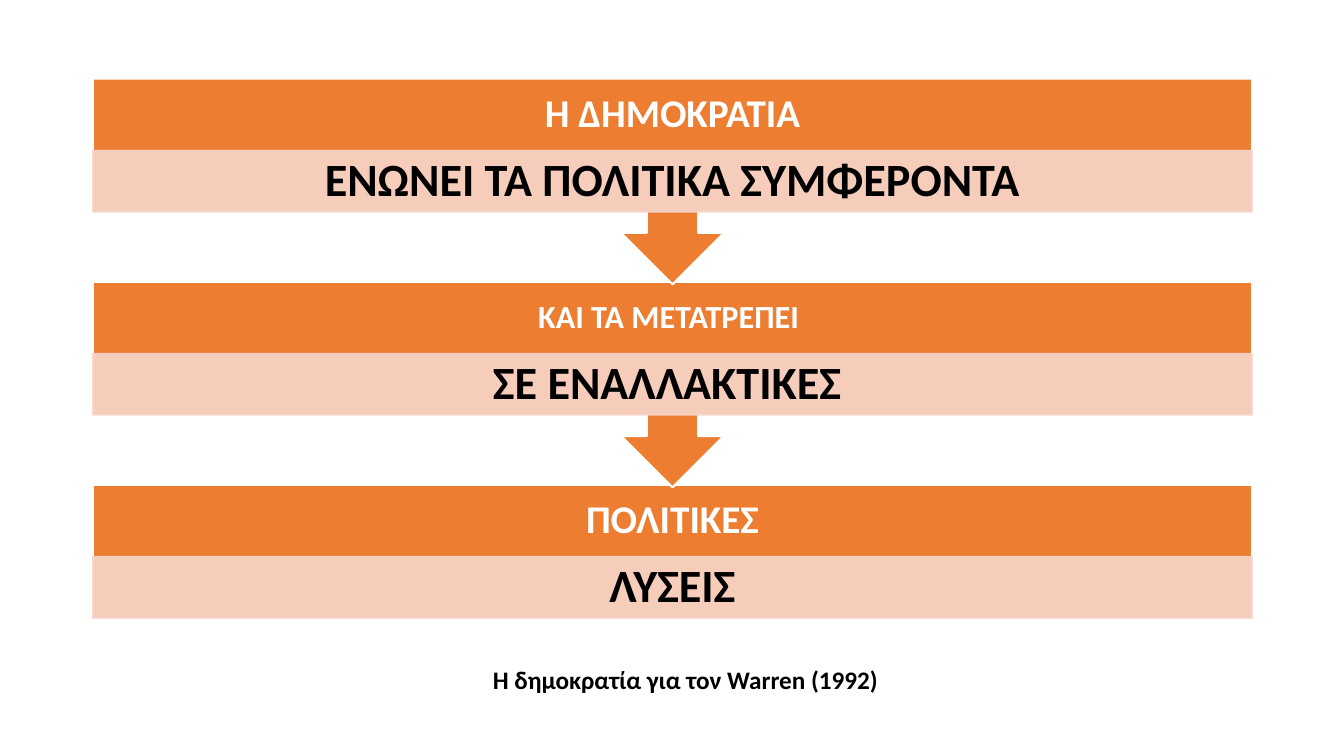
from dataclasses import dataclass

import pptx
import pptx.util
from lxml import etree
from pptx.dml.color import RGBColor
from pptx.enum.shapes import MSO_SHAPE
from pptx.enum.text import MSO_ANCHOR, MSO_AUTO_SIZE, PP_ALIGN
from pptx.oxml.ns import qn


@dataclass(frozen=True)
class Theme:
    font: str = "Calibri"
    band: str = "ED7D31"
    detail: str = "F7D5CB"
    light: str = "FFFFFF"
    dark: str = "000000"
    heading_size: int = 28
    small_heading_size: int = 23
    detail_size: int = 33
    caption_size: int = 18


@dataclass(frozen=True)
class Box:
    """A rectangle in percent of the slide's width and height."""
    left: float
    top: float
    width: float
    height: float


@dataclass(frozen=True)
class Stage:
    heading: str
    detail: str
    heading_size: int
    heading_inset: float


THEME = Theme()
SLIDE_WIDTH = pptx.util.Inches(13.33)
SLIDE_HEIGHT = pptx.util.Inches(7.5)

STAGE_LEFT, STAGE_WIDTH = 6.9, 86.27
FIRST_TOP, LAST_TOP = 10.4, 64.13
CALLOUT_HEIGHT, BLOCK_HEIGHT = 27.2, 17.6
HEADING_HEIGHT, DETAIL_HEIGHT = 9.5, 8.13
CAPTION_BOX = Box(33.08, 87.2, 35.86, 5.33)

STAGES = [
    Stage("Η ΔΗΜΟΚΡΑΤΙΑ", "ΕΝΩΝΕΙ ΤΑ ΠΟΛΙΤΙΚΑ ΣΥΜΦΕΡΟΝΤΑ", THEME.heading_size, 16),
    Stage("ΚΑΙ ΤΑ ΜΕΤΑΤΡΕΠΕΙ ", "ΣΕ ΕΝΑΛΛΑΚΤΙΚΕΣ ", THEME.small_heading_size, 13),
    Stage("ΠΟΛΙΤΙΚΕΣ", "ΛΥΣΕΙΣ", THEME.heading_size, 16),
]


def place(box: Box) -> tuple[int, int, int, int]:
    return (round(SLIDE_WIDTH * box.left / 100), round(SLIDE_HEIGHT * box.top / 100),
            round(SLIDE_WIDTH * box.width / 100), round(SLIDE_HEIGHT * box.height / 100))


def write_text(shape, text: str, *, size: int, color: str, inset_x: float = 7.2,
               inset_y: float = 3.6, anchor=MSO_ANCHOR.MIDDLE, spacing: float = 0.9) -> None:
    frame = shape.text_frame
    frame.word_wrap = True
    frame.vertical_anchor = anchor
    frame.margin_left = frame.margin_right = pptx.util.Pt(inset_x)
    frame.margin_top = frame.margin_bottom = pptx.util.Pt(inset_y)
    paragraph = frame.paragraphs[0]
    paragraph.alignment = PP_ALIGN.CENTER
    paragraph.line_spacing = spacing
    run = paragraph.add_run()
    run.text = text
    run.font.name = THEME.font
    run.font.size = pptx.util.Pt(size)
    run.font.bold = True
    run.font.color.rgb = RGBColor.from_string(color)


def add_filled_shape(slide, preset, box: Box, *, fill: str, line: str,
                     line_width: float, opacity: int = 100):
    shape = slide.shapes.add_shape(preset, *place(box))
    shape.shadow.inherit = False
    shape.fill.solid()
    shape.fill.fore_color.rgb = RGBColor.from_string(fill)
    shape.line.color.rgb = RGBColor.from_string(line)
    shape.line.width = pptx.util.Pt(line_width)
    if opacity < 100:
        for color in shape.element.spPr.iter(qn("a:srgbClr")):
            etree.SubElement(color, qn("a:alpha"), val=str(opacity * 1000))
    return shape


def add_stage(slide, stage: Stage, top: float, is_last: bool) -> None:
    """Draw a block with its heading and detail; all but the last point down."""
    preset = MSO_SHAPE.RECTANGLE if is_last else MSO_SHAPE.UP_ARROW_CALLOUT
    height = BLOCK_HEIGHT if is_last else CALLOUT_HEIGHT
    block = add_filled_shape(slide, preset, Box(STAGE_LEFT, top, STAGE_WIDTH, height),
                             fill=THEME.band, line=THEME.light, line_width=1.5)
    if not is_last:
        block.rotation = 180
        for index, share in enumerate((0.25, 0.25, 0.25, 0.65)):
            block.adjustments[index] = share

    heading_box = Box(STAGE_LEFT, top, STAGE_WIDTH, HEADING_HEIGHT)
    heading = slide.shapes.add_textbox(*place(heading_box))
    write_text(heading, stage.heading, size=stage.heading_size, color=THEME.light,
               inset_x=stage.heading_inset, inset_y=stage.heading_inset)

    detail_box = Box(STAGE_LEFT, top + HEADING_HEIGHT, STAGE_WIDTH, DETAIL_HEIGHT)
    detail = add_filled_shape(slide, MSO_SHAPE.RECTANGLE, detail_box, fill=THEME.detail,
                              line=THEME.detail, line_width=1, opacity=90)
    write_text(detail, stage.detail, size=THEME.detail_size, color=THEME.dark, inset_x=19)


def main() -> None:
    presentation = pptx.Presentation()
    presentation.slide_width = SLIDE_WIDTH
    presentation.slide_height = SLIDE_HEIGHT
    slide = presentation.slides.add_slide(presentation.slide_layouts[6])

    last = len(STAGES) - 1
    pitch = (LAST_TOP - FIRST_TOP) / last
    for index, stage in reversed(list(enumerate(STAGES))):
        add_stage(slide, stage, FIRST_TOP + index * pitch, index == last)

    caption = slide.shapes.add_textbox(*place(CAPTION_BOX))
    write_text(caption, "Η δημοκρατία για τον Warren (1992)", size=THEME.caption_size,
               color=THEME.dark, anchor=MSO_ANCHOR.TOP, spacing=1.0)
    caption.text_frame.auto_size = MSO_AUTO_SIZE.SHAPE_TO_FIT_TEXT

    presentation.save("out.pptx")


if __name__ == "__main__":
    main()
